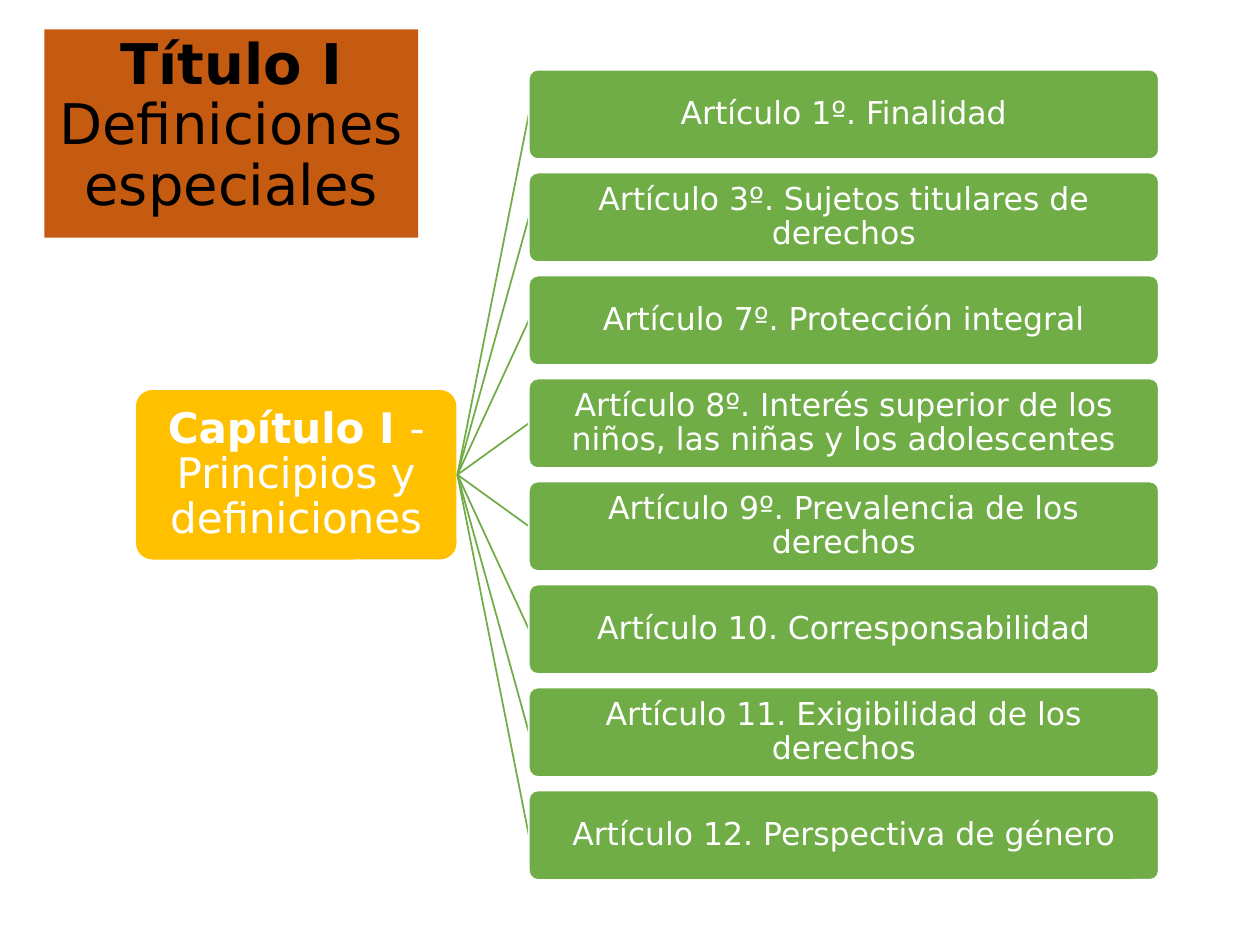
from dataclasses import dataclass

from lxml import etree
from pptx import Presentation
from pptx.dml.color import RGBColor
from pptx.enum.shapes import MSO_CONNECTOR, MSO_SHAPE
from pptx.enum.text import MSO_ANCHOR, MSO_AUTO_SIZE, PP_ALIGN
from pptx.oxml.ns import qn
from pptx.util import Pt

STRAIGHT = MSO_CONNECTOR.STRAIGHT
ROUNDED = MSO_SHAPE.ROUNDED_RECTANGLE
TOP, MIDDLE = MSO_ANCHOR.TOP, MSO_ANCHOR.MIDDLE
CENTER = PP_ALIGN.CENTER
NO_AUTOFIT = MSO_AUTO_SIZE.NONE
LEFT_SIDE, RIGHT_SIDE = 1, 3
TITLE_ONLY = 5


@dataclass(frozen=True)
class Theme:
    font: str = "DejaVu Sans"
    title_fill: RGBColor = RGBColor(0xC5, 0x5A, 0x11)
    chapter_fill: RGBColor = RGBColor(0xFF, 0xC0, 0x00)
    article_fill: RGBColor = RGBColor(0x70, 0xAD, 0x47)
    dark: RGBColor = RGBColor(0, 0, 0)
    light: RGBColor = RGBColor(0xFF, 0xFF, 0xFF)
    title_size: float = 32
    chapter_size: float = 24
    article_size: float = 18
    line_width: float = 1
    corner: float = 0.1


THEME = Theme()
TITLE = [("Título I ", True), ("Definiciones especiales", False)]
CHAPTER = [("Capítulo I ", True), ("- Principios y definiciones", False)]
ARTICLES = [
    "Artículo 1º. Finalidad",
    "Artículo 3º. Sujetos titulares de derechos",
    "Artículo 7º. Protección integral",
    "Artículo 8º. Interés superior de los niños, las niñas y los adolescentes",
    "Artículo 9º. Prevalencia de los derechos",
    "Artículo 10. Corresponsabilidad",
    "Artículo 11. Exigibilidad de los derechos",
    "Artículo 12. Perspectiva de género",
]


def write_text(shape, runs, size, color, anchor):
    frame = shape.text_frame
    frame.word_wrap = True
    frame.auto_size = NO_AUTOFIT
    frame.vertical_anchor = anchor
    paragraph = frame.paragraphs[0]
    paragraph.alignment = CENTER
    paragraph.line_spacing = 0.9
    for text, bold in runs:
        run = paragraph.add_run()
        run.text = text
        run.font.name = THEME.font
        run.font.size = Pt(size)
        run.font.bold = bold
        run.font.color.rgb = color


def place_title(slide, left, top, width, height):
    title = slide.shapes.title
    title.left, title.top = Pt(left), Pt(top)
    title.width, title.height = Pt(width), Pt(height)
    title.fill.solid()
    title.fill.fore_color.rgb = THEME.title_fill
    write_text(title, TITLE, THEME.title_size, THEME.dark, TOP)


def add_node(slide, box, runs, fill, size, inset):
    node = slide.shapes.add_shape(ROUNDED, *map(Pt, box))
    node.shadow.inherit = False
    node.adjustments[0] = THEME.corner
    node.fill.solid()
    node.fill.fore_color.rgb = fill
    node.line.color.rgb = THEME.light
    node.line.width = Pt(THEME.line_width)
    frame = node.text_frame
    frame.margin_left = frame.margin_right = Pt(inset)
    frame.margin_top = frame.margin_bottom = Pt(inset)
    write_text(node, runs, size, THEME.light, MIDDLE)
    return node


def add_branch(slide):
    branch = slide.shapes.add_connector(STRAIGHT, 0, 0, 0, 0)
    branch.line.color.rgb = THEME.article_fill
    branch.line.width = Pt(THEME.line_width)
    etree.SubElement(branch._element.spPr, qn("a:effectLst"))
    return branch


def add_chapter_tree(slide, left, top, width, height):
    chapter_width, chapter_height = 184.2, 97.9
    article_width, article_height = 360, 51.1
    chapter_box = (left, top + (height - chapter_height) / 2,
                   chapter_width, chapter_height)
    chapter = add_node(slide, chapter_box, CHAPTER, THEME.chapter_fill,
                       THEME.chapter_size, 1.44)
    article_left = left + width - article_width
    pitch = (height - article_height) / (len(ARTICLES) - 1)
    for index, text in enumerate(ARTICLES):
        branch = add_branch(slide)
        article_box = (article_left, top + index * pitch,
                       article_width, article_height)
        article = add_node(slide, article_box, [(text, False)],
                           THEME.article_fill, THEME.article_size, 0.72)
        branch.begin_connect(chapter, RIGHT_SIDE)
        branch.end_connect(article, LEFT_SIDE)


def main():
    presentation = Presentation()
    presentation.slide_width, presentation.slide_height = Pt(720), Pt(540)
    slide = presentation.slides.add_slide(presentation.slide_layouts[TITLE_ONLY])
    place_title(slide, 25.4, 16.8, 213.6, 119)
    add_chapter_tree(slide, 77.2, 39.8, 585, 463)
    presentation.save("out.pptx")


if __name__ == "__main__":
    main()
